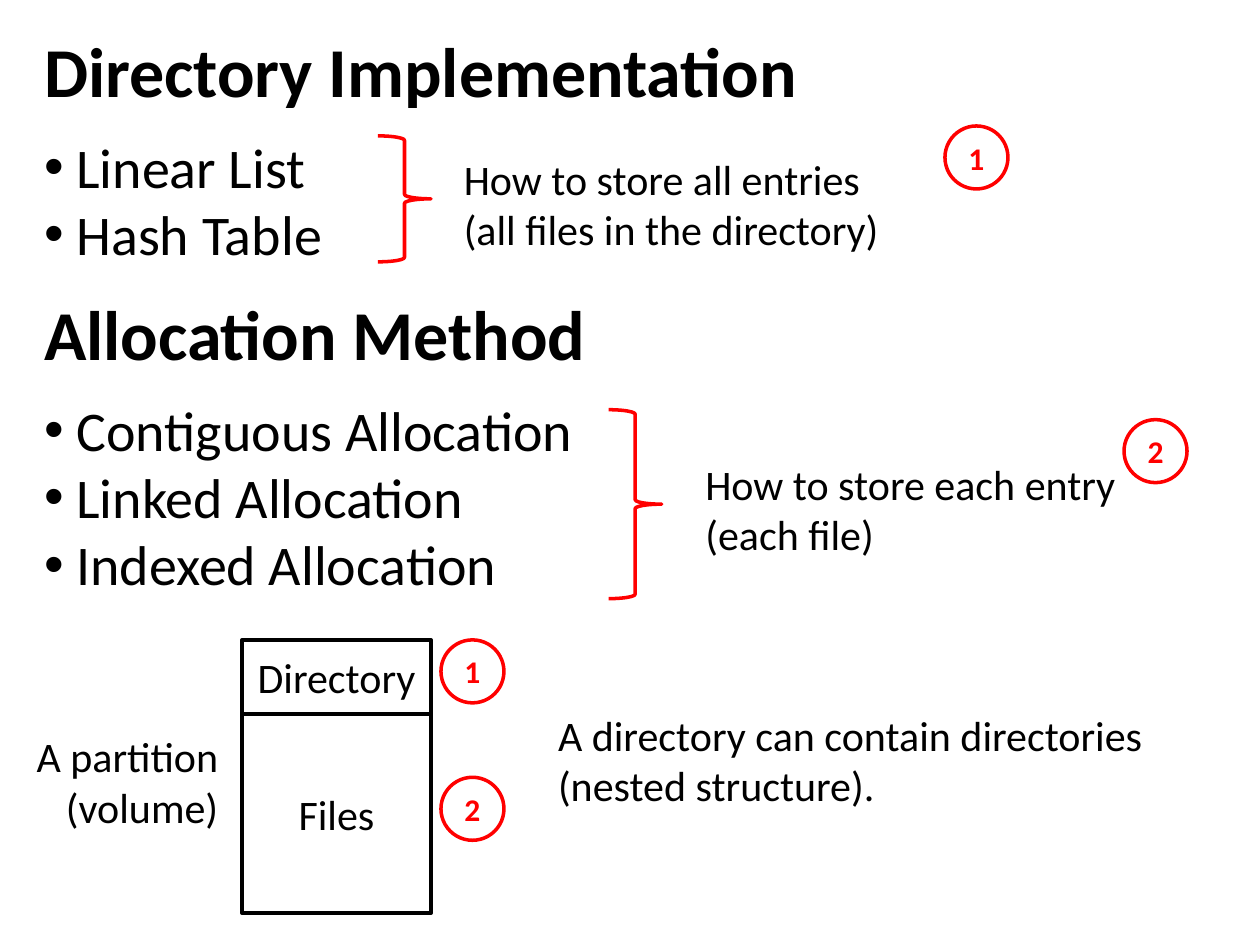
"""Build a slide relating directory implementation to file allocation methods."""
from dataclasses import dataclass

from lxml.etree import SubElement
from pptx import Presentation
from pptx.dml.color import RGBColor
from pptx.enum.shapes import MSO_SHAPE as Preset
from pptx.enum.text import MSO_ANCHOR as Anchor, MSO_AUTO_SIZE as AutoSize, PP_ALIGN as Align
from pptx.oxml.ns import qn
from pptx.slide import Slide
from pptx.text.text import _Paragraph as Paragraph
from pptx.util import Cm, Pt

BLACK = RGBColor(0x00, 0x00, 0x00)
RED = RGBColor(0xFF, 0x00, 0x00)

HEADING = {"name": "Calibri", "size": Pt(40), "bold": True}
ITEM = {"name": "Calibri", "size": Pt(32), "bold": False}
NOTE = {"name": "Calibri", "size": Pt(24), "bold": False}
BADGE = {"name": "Calibri", "size": Pt(18), "bold": True}

MARGIN, FULL_WIDTH = 0.64, 24.13
NOTE_HEIGHT, BADGE_SIZE = 2.31, 1.27
VOLUME_LEFT, VOLUME_TOP, VOLUME_WIDTH = 4.88, 12.9, 3.81
DIRECTORY_HEIGHT, FILES_HEIGHT = 1.5, 4.01
BADGE_LEFT = 8.89


@dataclass(frozen=True)
class Area:
    left: float
    top: float
    width: float
    height: float

    def lengths(self) -> list[Cm]:
        return [Cm(value) for value in (self.left, self.top, self.width, self.height)]


@dataclass(frozen=True)
class TextBlock:
    area: Area
    lines: tuple[str, ...]
    style: dict
    align: Align = Align.LEFT
    bulleted: bool = False


@dataclass(frozen=True)
class Outline:
    preset: Preset
    area: Area
    color: RGBColor
    label: str = ""
    style: dict | None = None


def heading(top: float, title: str) -> TextBlock:
    return TextBlock(Area(MARGIN, top, FULL_WIDTH, 1.96), (title,), HEADING)


def bullets(top: float, height: float, *items: str) -> TextBlock:
    lines = tuple(f" {item}" for item in items)
    return TextBlock(Area(MARGIN, top, FULL_WIDTH, height), lines, ITEM, bulleted=True)


def note(left: float, top: float, width: float, words: str, align: Align = Align.LEFT) -> TextBlock:
    return TextBlock(Area(left, top, width, NOTE_HEIGHT), (words,), NOTE, align)


def brace(left: float, top: float, height: float) -> Outline:
    return Outline(Preset.RIGHT_BRACE, Area(left, top, 1.07, height), RED)


def badge(left: float, top: float, number: str) -> Outline:
    return Outline(Preset.OVAL, Area(left, top, BADGE_SIZE, BADGE_SIZE), RED, number, BADGE)


def section(top: float, height: float, label: str) -> Outline:
    area = Area(VOLUME_LEFT, top, VOLUME_WIDTH, height)
    return Outline(Preset.RECTANGLE, area, BLACK, label, NOTE)


TEXT_BLOCKS = (
    heading(0.43, "Directory Implementation"),
    bullets(2.54, 3.0, "Linear List", "Hash Table"),
    heading(5.74, "Allocation Method"),
    bullets(7.85, 4.37, "Contiguous Allocation", "Linked Allocation", "Indexed Allocation"),
    note(9.1, 2.97, 10.59, "How to store all entries\n(all files in the directory)"),
    note(13.97, 9.12, 9.32, "How to store each entry\n(each file)"),
    note(0.2, 14.61, 4.45, "A partition\n(volume)", Align.RIGHT),
    note(11.0, 14.17, 13.77, "A directory can contain directories\n(nested structure)."),
)

OUTLINES = (
    brace(7.62, 2.74, 2.54),
    brace(12.27, 8.26, 3.81),
    badge(19.05, 2.54, "1"),
    badge(22.66, 8.46, "2"),
    section(VOLUME_TOP + DIRECTORY_HEIGHT, FILES_HEIGHT, "Files"),
    section(VOLUME_TOP, DIRECTORY_HEIGHT, "Directory"),
    badge(BADGE_LEFT, VOLUME_TOP, "1"),
    badge(BADGE_LEFT, 15.67, "2"),
)


def write(para: Paragraph, words: str, style: dict, color: RGBColor, align: Align) -> None:
    para.text = words
    para.alignment = align
    for span in para.runs:
        for name, value in style.items():
            setattr(span.font, name, value)
        span.font.color.rgb = color


def add_bullet(para: Paragraph) -> None:
    properties = para._p.get_or_add_pPr()
    SubElement(properties, qn("a:buFont"), typeface="Arial")
    SubElement(properties, qn("a:buChar"), char="•")


def draw_text(page: Slide, block: TextBlock) -> None:
    frame = page.shapes.add_textbox(*block.area.lengths()).text_frame
    frame.word_wrap = True
    frame.auto_size = AutoSize.SHAPE_TO_FIT_TEXT
    for index, line in enumerate(block.lines):
        para = frame.add_paragraph() if index else frame.paragraphs[0]
        write(para, line, block.style, BLACK, block.align)
        if block.bulleted:
            add_bullet(para)


def draw_outline(page: Slide, outline: Outline) -> None:
    box = page.shapes.add_shape(outline.preset, *outline.area.lengths())
    box.shadow.inherit = False
    box.fill.background()
    box.line.color.rgb = outline.color
    box.line.width = Pt(2)
    if outline.style:
        box.text_frame.vertical_anchor = Anchor.MIDDLE
        para = box.text_frame.paragraphs[0]
        write(para, outline.label, outline.style, outline.color, Align.CENTER)


def main() -> None:
    deck = Presentation()
    deck.slide_width, deck.slide_height = Cm(25.4), Cm(19.05)
    page = deck.slides.add_slide(deck.slide_layouts[6])
    for block in TEXT_BLOCKS:
        draw_text(page, block)
    for outline in OUTLINES:
        draw_outline(page, outline)
    deck.save("out.pptx")


if __name__ == "__main__":
    main()
